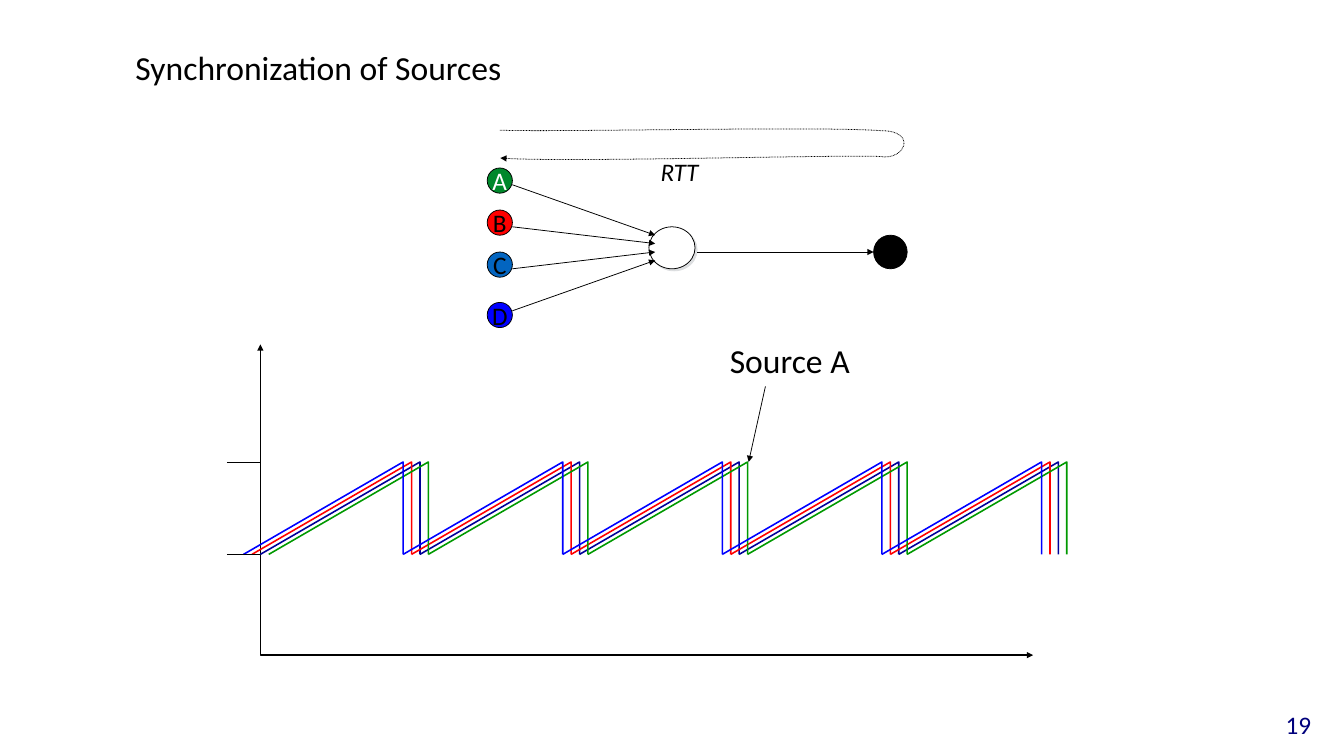
from lxml import etree
from pptx import Presentation
from pptx.dml.color import RGBColor
from pptx.enum.dml import MSO_LINE
from pptx.enum.shapes import MSO_CONNECTOR, MSO_SHAPE
from pptx.enum.text import MSO_ANCHOR, MSO_AUTO_SIZE, PP_ALIGN
from pptx.oxml.ns import qn
from pptx.util import Pt

STRAIGHT = MSO_CONNECTOR.STRAIGHT
OVAL = MSO_SHAPE.OVAL
DOTTED = MSO_LINE.ROUND_DOT
LEFT, CENTER = PP_ALIGN.LEFT, PP_ALIGN.CENTER
TOP, MIDDLE = MSO_ANCHOR.TOP, MSO_ANCHOR.MIDDLE
GROW, FIXED = MSO_AUTO_SIZE.SHAPE_TO_FIT_TEXT, MSO_AUTO_SIZE.NONE

FONT = "Calibri"
COLORS = {
    "ink": "000000", "paper": "FFFFFF", "page": "00007C", "shadow": "DCDEE0",
    "node_a": "00882B", "node_b": "FF0000", "node_c": "0365C0", "node_d": "0000FF",
    "wave_a": "009900", "wave_b": "FF0000", "wave_c": "000099", "wave_d": "0000FF",
}


def rgb(name):
    """Return the named palette colour."""
    return RGBColor.from_string(COLORS[name])


def write(frame, text, size=24, color="ink", align=LEFT, anchor=TOP,
          italic=False, inset=None, wrap=False, fit=FIXED):
    """Put formatted text into a text frame."""
    frame.word_wrap = wrap
    frame.auto_size = fit
    frame.vertical_anchor = anchor
    if inset is not None:
        frame.margin_left = frame.margin_right = Pt(inset)
        frame.margin_top = frame.margin_bottom = Pt(inset)
    paragraph = frame.paragraphs[0]
    paragraph.alignment = align
    run = paragraph.add_run()
    run.text = text
    run.font.name = FONT
    run.font.size = Pt(size)
    run.font.italic = italic
    run.font.color.rgb = rgb(color)


def label(slide, box, text, **style):
    """Add a text box that fits its text."""
    textbox = slide.shapes.add_textbox(*map(Pt, box))
    write(textbox.text_frame, text, fit=GROW, **style)


def style_line(line, color="ink", width=0.75, ends=()):
    """Set a line's colour, width and arrowheads."""
    line.color.rgb = rgb(color)
    line.width = Pt(width)
    for end in ends:
        etree.SubElement(line._get_or_add_ln(), qn(f"a:{end}"), type="triangle")


def connect(slide, start, end, ends=()):
    """Draw a straight line between two points."""
    connector = slide.shapes.add_connector(STRAIGHT, *map(Pt, (*start, *end)))
    style_line(connector.line, ends=ends)
    etree.SubElement(connector._element.spPr, qn("a:effectLst"))


def outline(slide, points, dash=None, **style):
    """Draw an open, unfilled line through the points."""
    start, *rest = [(Pt(x), Pt(y)) for x, y in points]
    builder = slide.shapes.build_freeform(*start)
    builder.add_line_segments(rest, close=False)
    shape = builder.convert_to_shape()
    shape.fill.background()
    shape.shadow.inherit = False
    if dash:
        shape.line.dash_style = dash
    style_line(shape.line, **style)
    return shape


def bend(shape):
    """Turn each three straight segments into one cubic curve."""
    segments = list(shape._element.iter(qn("a:lnTo")))
    for first in range(0, len(segments), 3):
        curve = etree.Element(qn("a:cubicBezTo"))
        segments[first].addprevious(curve)
        for segment in segments[first:first + 3]:
            curve.append(segment[0])
            segment.getparent().remove(segment)


def node(slide, box, fill):
    """Draw one round network node."""
    shape = slide.shapes.add_shape(OVAL, *map(Pt, box))
    shape.shadow.inherit = False
    shape.fill.solid()
    shape.fill.fore_color.rgb = rgb(fill)
    style_line(shape.line)
    return shape


def drop_shadow(shape):
    """Give a shape a small hard shadow to the lower right."""
    effects = shape._element.spPr.find(qn("a:effectLst"))
    shadow = etree.SubElement(effects, qn("a:outerShdw"), blurRad="0",
                              dist=str(Pt(2.8)), dir="2700000", rotWithShape="0")
    etree.SubElement(shadow, qn("a:srgbClr"), val=COLORS["shadow"])


def heading(slide, box):
    """Place the slide title."""
    title = slide.shapes.title
    title.left, title.top, title.width, title.height = map(Pt, box)
    write(title.text_frame, "Synchronization of Sources", size=32,
          anchor=MIDDLE, inset=4, wrap=True)


def saw_teeth(slide, box):
    """Draw the axes and the shifted sawtooth of every source."""
    left, top, width, height = box
    peak, floor = top + 112, top + 200
    period, shift, teeth = 152, 8, 5
    outline(slide, [(left, top), (left, top + height), (left + width, top + height)],
            width=1.5, ends=("headEnd", "tailEnd"))
    for wave, steps in (("wave_c", 0), ("wave_b", -1), ("wave_a", 1), ("wave_d", -2)):
        for tooth in range(teeth):
            start = left + steps * shift + tooth * period
            end = start + period
            outline(slide, [(start, floor), (end, peak), (end, floor)],
                    color=wave, width=1.5)
    for level in (floor, peak):
        connect(slide, (left - 32, level), (left, level))
    label(slide, (left + 440, top - 8, 130, 46), "Source A", size=32)
    connect(slide, (left + 481, top + 40), (left + 465, peak), ends=("tailEnd",))


def network(slide, box):
    """Draw four sources that share one router and one sink."""
    left, top, width, height = box
    size, sink_size = 24, 32
    sources = (("A", 0, "paper"), ("B", 40, "ink"), ("C", 80, "ink"),
               ("D", height - size, "ink"))
    router = node(slide, (left + 154, top + 56, 44, 40), "paper")
    drop_shadow(router)
    for index, (name, offset, color) in enumerate(sources):
        source = node(slide, (left, top + offset, size, size), f"node_{name.lower()}")
        write(source.text_frame, name, color=color, align=CENTER, anchor=MIDDLE)
        connect(slide, (left + size, top + 16 + 40 * index),
                (left + 160, top + 64 + 8 * index), ends=("tailEnd",))
    sink_left = left + width - sink_size
    connect(slide, (left + 200, top + 80), (sink_left, top + 80), ends=("tailEnd",))
    node(slide, (sink_left, top + 64, sink_size, sink_size), "ink")


def round_trip(slide, box):
    """Draw the dotted path to the sink and back with its label."""
    left, top, width, height = box
    path_points = [(0, 4), (58, 6), (302, 0), (363.5, 4.5),
                   (width, 4.5), (386, 33.5), (362, 29),
                   (302, 27.5), (59, height), (0.5, 30.5)]
    loop = outline(slide, [(left + x, top + y) for x, y in path_points],
                   dash=DOTTED, ends=("tailEnd",))
    bend(loop)
    label(slide, (left + 146, top + 25, 51, 36), "RTT", italic=True)


def main():
    """Build and save the slide."""
    deck = Presentation()
    deck.slide_width, deck.slide_height = Pt(1280), Pt(720)
    slide = deck.slides.add_slide(deck.slide_layouts[5])
    heading(slide, (125, 0, 1030, 128))
    saw_teeth(slide, (248, 328, 736, 296))
    network(slide, (464, 160, 400, 152))
    round_trip(slide, (476, 120, 398, 35))
    label(slide, (1220, 676, 33, 36), "19", color="page", align=CENTER, inset=0)
    deck.save("out.pptx")


if __name__ == "__main__":
    main()
